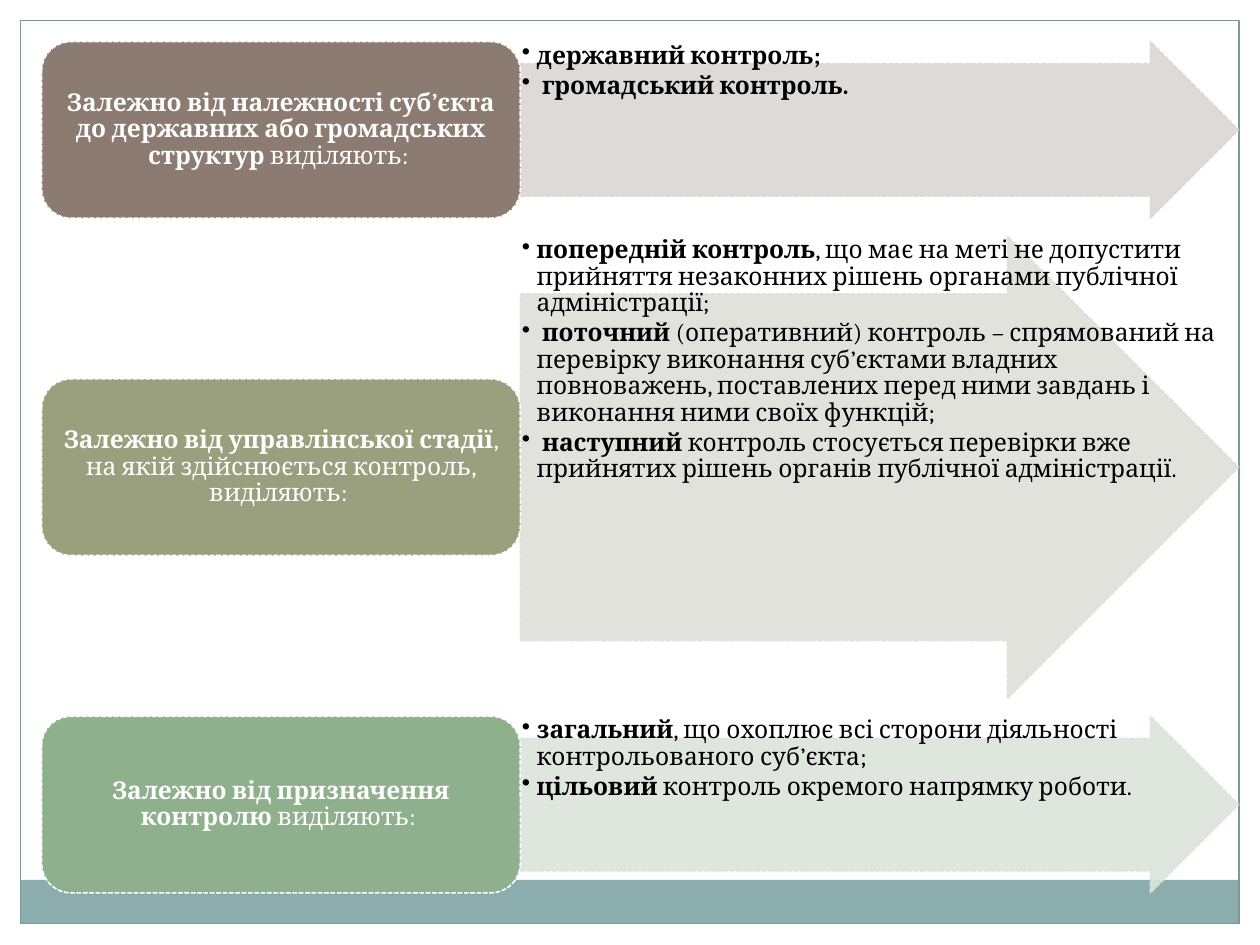
from dataclasses import dataclass

from lxml.etree import SubElement
from pptx import Presentation
from pptx.dml.color import RGBColor
from pptx.enum.dml import MSO_LINE_DASH_STYLE as Dash
from pptx.enum.shapes import MSO_SHAPE as Preset
from pptx.enum.text import MSO_ANCHOR as Anchor, PP_ALIGN as Align
from pptx.oxml.ns import qn
from pptx.util import Cm, Pt


@dataclass(frozen=True)
class Theme:
    font: str = "Cambria"
    text_size: float = 14
    line_spacing: float = 0.9
    item_gap: float = 2
    dash_width: float = 0.9
    frame_width: float = 0.75
    tint_opacity: int = 90
    dark: str = "000000"
    light: str = "FFFFFF"
    frame: str = "7C999A"
    footer: str = "8CADAE"


@dataclass(frozen=True)
class Box:
    """A rectangle in centimetres."""
    left: float
    top: float
    width: float
    height: float

    def lengths(self):
        return [Cm(side) for side in (self.left, self.top, self.width, self.height)]


THEME = Theme()
FRAME = Box(0.42, 0.42, 24.56, 18.2)
FOOTER_HEIGHT = 0.88
ROWS_LEFT, ROWS_TOP, ROWS_WIDTH = 0.84, 0.84, 24.13
ROW_GAP = 0.36
LABEL_WIDTH, LABEL_HEIGHT = 9.65, 3.56
BULLET_INDENT = 0.3

# Each row: height, label colour, arrow colour, label runs, items.
# Runs alternate between bold and regular, starting with bold.
ROWS = [
    (3.56, "8C7B70", "DAD7D5",
     ["Залежно від належності суб’єкта до державних або громадських структур",
      " виділяють: "],
     [["державний контроль;"],
      [" громадський контроль."]]),
    (9.32, "9A9F7D", "DEDFD8",
     ["Залежно від управлінської стадії",
      ", на якій здійснюється контроль, виділяють: "],
     [["попередній контроль",
       ", що має на меті не допустити прийняття незаконних рішень органами "
       "публічної адміністрації;"],
      [" поточний",
       " (оперативний) контроль – спрямований на перевірку виконання суб’єктами "
       "владних повноважень, поставлених перед ними завдань і виконання ними "
       "своїх функцій;"],
      [" наступний",
       " контроль стосується перевірки вже прийнятих рішень органів публічної "
       "адміністрації."]]),
    (3.56, "8FB08C", "DBE4DA",
     ["Залежно від призначення контролю", " виділяють: "],
     [["загальний",
       ", що охоплює всі сторони діяльності контрольованого суб’єкта;"],
      ["цільовий", " контроль окремого напрямку роботи."]]),
]


def rgb(color):
    return RGBColor.from_string(color)


def add_preset(slide, preset, box, fill=None, line=None, line_width=0, dash=None):
    shape = slide.shapes.add_shape(preset, *box.lengths())
    shape.shadow.inherit = False
    if fill:
        shape.fill.solid()
        shape.fill.fore_color.rgb = rgb(fill)
    else:
        shape.fill.background()
    if line:
        shape.line.color.rgb = rgb(line)
        shape.line.width = Pt(line_width)
        shape.line.dash_style = dash
    else:
        shape.line.fill.background()
    return shape


def set_opacity(shape, percent):
    """Apply one opacity to the fill and the line of a shape."""
    for color in shape._element.spPr.iter(qn("a:srgbClr")):
        SubElement(color, qn("a:alpha"), val=str(percent * 1000))


def add_text(slide, box, paragraphs, color, margins, anchor=Anchor.TOP):
    """Add a text box and return its paragraphs."""
    frame = slide.shapes.add_textbox(*box.lengths()).text_frame
    frame.word_wrap = True
    frame.vertical_anchor = anchor
    frame.margin_left = frame.margin_right = Cm(margins[0])
    frame.margin_top = frame.margin_bottom = Cm(margins[1])
    for index, runs in enumerate(paragraphs):
        paragraph = frame.add_paragraph() if index else frame.paragraphs[0]
        paragraph.line_spacing = THEME.line_spacing
        paragraph.font.name = THEME.font
        paragraph.font.size = Pt(THEME.text_size)
        paragraph.font.color.rgb = rgb(color)
        for position, text in enumerate(runs):
            run = paragraph.add_run()
            run.text = text
            run.font.bold = position % 2 == 0
    return frame.paragraphs


def add_bullet(paragraph):
    properties = paragraph._p.get_or_add_pPr()
    properties.set("marL", str(Cm(BULLET_INDENT)))
    properties.set("indent", str(-Cm(BULLET_INDENT)))
    bullet = SubElement(properties, qn("a:buChar"), char="•")
    defaults = properties.find(qn("a:defRPr"))
    if defaults is not None:
        defaults.addprevious(bullet)


def add_frame(slide, box):
    footer = Box(box.left, box.top + box.height - FOOTER_HEIGHT, box.width, FOOTER_HEIGHT)
    add_preset(slide, Preset.RECTANGLE, footer, fill=THEME.footer)
    add_preset(slide, Preset.RECTANGLE, box, line=THEME.frame, line_width=THEME.frame_width)


def add_arrow(slide, box, color, items):
    arrow = add_preset(slide, Preset.RIGHT_ARROW, box, color, color,
                       THEME.dash_width, Dash.SQUARE_DOT)
    arrow.adjustments[0] = 0.75
    arrow.adjustments[1] = 0.5
    set_opacity(arrow, THEME.tint_opacity)
    for paragraph in add_text(slide, box, items, THEME.dark, (0.03, 0.03)):
        paragraph.space_after = Pt(THEME.item_gap)
        add_bullet(paragraph)


def add_label(slide, box, color, runs):
    add_preset(slide, Preset.ROUNDED_RECTANGLE, box, color, THEME.light,
               THEME.dash_width, Dash.SQUARE_DOT)
    for paragraph in add_text(slide, box, [runs], THEME.light, (0.15, 0.08), Anchor.MIDDLE):
        paragraph.alignment = Align.CENTER


def add_row(slide, box, label_color, arrow_color, label_runs, items):
    """Place the arrow with its items, and the label centred on its left."""
    add_arrow(slide, Box(box.left + LABEL_WIDTH, box.top, box.width - LABEL_WIDTH, box.height),
              arrow_color, items)
    label_top = box.top + (box.height - LABEL_HEIGHT) / 2
    add_label(slide, Box(box.left, label_top, LABEL_WIDTH, LABEL_HEIGHT),
              label_color, label_runs)


def main():
    presentation = Presentation()
    presentation.slide_width, presentation.slide_height = Cm(25.4), Cm(19.05)
    slide = presentation.slides.add_slide(presentation.slide_layouts[6])
    add_frame(slide, FRAME)
    top = ROWS_TOP
    for height, *content in ROWS:
        add_row(slide, Box(ROWS_LEFT, top, ROWS_WIDTH, height), *content)
        top += height + ROW_GAP
    presentation.save("out.pptx")


if __name__ == "__main__":
    main()
